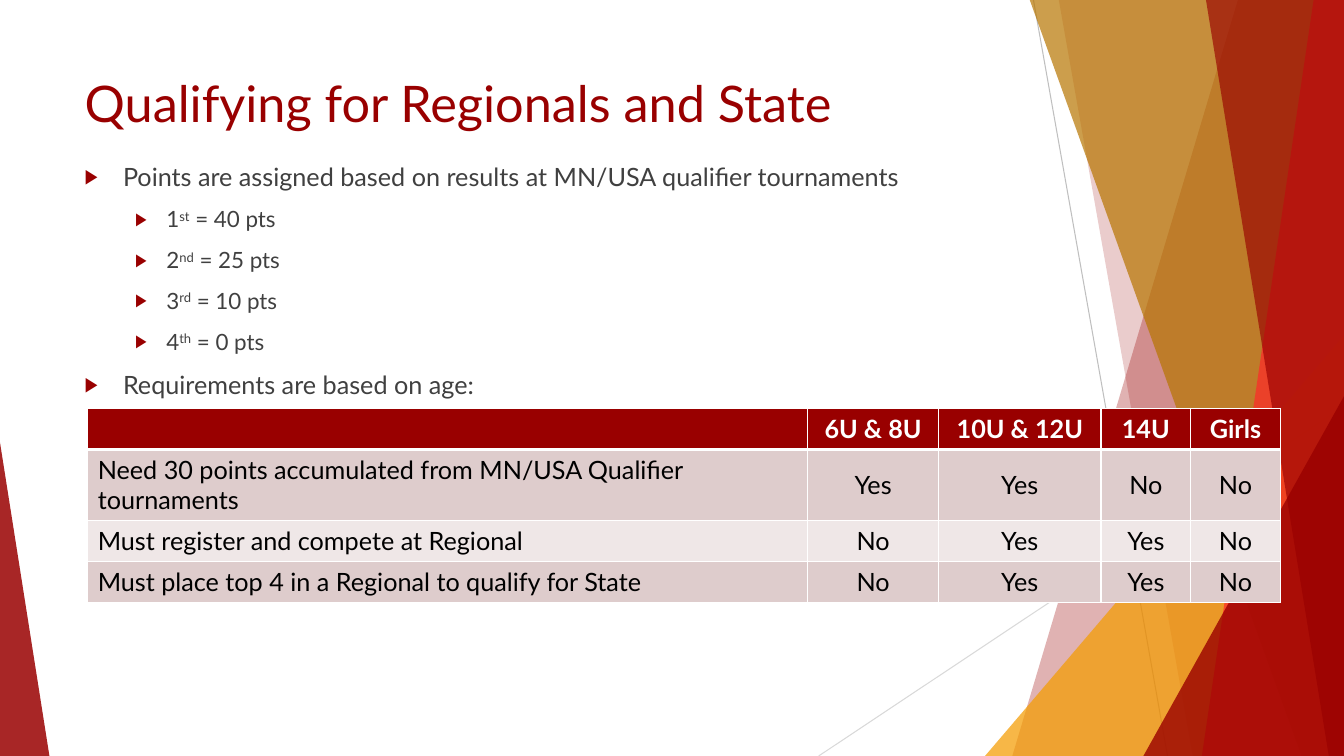
from lxml.etree import SubElement
from pptx import Presentation
from pptx.dml.color import RGBColor
from pptx.enum.shapes import MSO_CONNECTOR, MSO_SHAPE
from pptx.enum.text import MSO_ANCHOR, MSO_AUTO_SIZE, PP_ALIGN
from pptx.oxml.ns import qn
from pptx.util import Emu, Pt

EMU_PER_PX = 9144
WIDTH, HEIGHT = 1333, 750
RED, INK, WHITE, BLACK = "990000", "404040", "FFFFFF", "000000"

FACETS = [
    (1228, 1004, RED, 30),
    (1050, 1183, RED, 20),
    (977, 333, 356, 417, 1, "F49C00", 72),
    (1021, 1291, "B77500", 70),
    (1303, 1192, "FF2929", 70),
    (1196, 1318, RED, 65),
    (1134, 393, 199, 357, 1, RED, 80),
    (0, 439, 49, 311, 0, RED, 85),
]
BULLETS = [
    (0, ["Points are assigned based on results at MN/USA qualifier tournaments"]),
    (1, ["1", "st", " = 40 pts"]),
    (1, ["2", "nd", " = 25 pts"]),
    (1, ["3", "rd", " = 10 pts"]),
    (1, ["4", "th", " = 0 pts"]),
    (0, ["Requirements are based on age:"]),
]
REQUIREMENTS = [
    ["", "6U & 8U", "10U & 12U", "14U", "Girls"],
    ["Need 30 points accumulated from MN/USA Qualifier tournaments", "Yes", "Yes", "No", "No"],
    ["Must register and compete at Regional", "No", "Yes", "Yes", "No"],
    ["Must place top 4 in a Regional to qualify for State", "No", "Yes", "Yes", "No"],
]
ROW_FILLS = [RED, "DECCCC", "EFE7E7", "DECCCC"]


def px(*lengths):
    return [Emu(length * EMU_PER_PX) for length in lengths]


def colour(value):
    return RGBColor.from_string(value)


def apply(target, values):
    for name, value in values.items():
        setattr(target, name, value)


class SlideBuilder:
    """Draws styled elements on the current slide."""

    def __init__(self, page, font):
        self.page = page
        self.font = font

    def span(self, para, text, size, ink, **values):
        span = para.add_run()
        span.text = text
        apply(span.font, {"name": self.font, "size": Pt(size), **values})
        span.font.color.rgb = colour(ink)
        return span

    def line(self, start, end, ink):
        line = self.page.shapes.add_connector(MSO_CONNECTOR.STRAIGHT, *px(*start, *end))
        line.line.color.rgb = colour(ink)
        line.line.width = Pt(0.75)
        SubElement(line.element.spPr, qn("a:effectLst"))

    def paint(self, shape, ink, opacity):
        shape.shadow.inherit = False
        shape.fill.solid()
        shape.fill.fore_color.rgb = colour(ink)
        shape.line.fill.background()
        tint = shape.element.spPr.find(".//" + qn("a:srgbClr"))
        SubElement(tint, qn("a:alpha"), val=str(opacity * 1000))

    def band(self, top, bottom, ink, opacity):
        outline = self.page.shapes.build_freeform(top, -1, scale=EMU_PER_PX)
        outline.add_line_segments([(WIDTH, -1), (WIDTH, HEIGHT), (bottom, HEIGHT)])
        self.paint(outline.convert_to_shape(), ink, opacity)

    def triangle(self, left, top, width, height, apex, ink, opacity):
        shape = self.page.shapes.add_shape(
            MSO_SHAPE.ISOSCELES_TRIANGLE, *px(left, top, width, height))
        shape.adjustments[0] = apex
        self.paint(shape, ink, opacity)

    def place(self, holder, *bounds):
        apply(holder, dict(zip(("left", "top", "width", "height"), px(*bounds))))
        apply(holder.text_frame, {
            "word_wrap": True,
            "auto_size": MSO_AUTO_SIZE.NONE,
            "vertical_anchor": MSO_ANCHOR.TOP,
        })
        holder.element.getparent().append(holder.element)
        return holder.text_frame

    def title(self, text, *bounds):
        para = self.place(self.page.shapes.title, *bounds).paragraphs[0]
        para.alignment = PP_ALIGN.LEFT
        self.span(para, text, 36, RED)

    def bullets(self, items, *bounds):
        frame = self.place(self.page.placeholders[1], *bounds)
        for index, (level, parts) in enumerate(items):
            para = frame.add_paragraph() if index else frame.paragraphs[0]
            apply(para, {"level": level, "space_before": Pt(10)})
            self.mark(para, *((81, 31) if level else (38, 38)))
            for order, part in enumerate(parts):
                span = self.span(para, part, 16 if level else 18, INK)
                if order == 1:
                    span.font._element.set("baseline", "30000")

    def mark(self, para, margin, hanging):
        properties = para._p.get_or_add_pPr()
        indent, hang = px(margin, hanging)
        properties.set("marL", str(indent))
        properties.set("indent", str(-hang))
        SubElement(SubElement(properties, qn("a:buClr")), qn("a:srgbClr"), val=RED)
        SubElement(properties, qn("a:buSzPct"), val="80000")
        SubElement(properties, qn("a:buChar"), char="▶")

    def border(self, cell, side, points):
        edge = SubElement(cell._tc.get_or_add_tcPr(), qn("a:ln" + side), w=str(Pt(points)))
        SubElement(SubElement(edge, qn("a:solidFill")), qn("a:srgbClr"), val=WHITE)

    def table(self, rows, fills, widths, heights, left, top):
        table = self.page.shapes.add_table(
            len(rows), len(widths), *px(left, top, sum(widths), sum(heights))).table
        for column, width in zip(table.columns, px(*widths)):
            column.width = width
        for row, height in zip(table.rows, px(*heights)):
            row.height = height
        for row, texts in enumerate(rows):
            for column, text in enumerate(texts):
                self.cell(table.cell(row, column), text, fills[row], row == 0, column == 0)

    def cell(self, cell, text, fill, heading, label):
        for side in "LRTB":
            self.border(cell, side, 3 if heading and side == "B" else 1)
        cell.fill.solid()
        cell.fill.fore_color.rgb = colour(fill)
        cell.vertical_anchor = MSO_ANCHOR.TOP if label else MSO_ANCHOR.MIDDLE
        para = cell.text_frame.paragraphs[0]
        para.alignment = PP_ALIGN.LEFT if label else PP_ALIGN.CENTER
        if text:
            self.span(para, text, 18, WHITE if heading else BLACK, bold=heading)
        else:
            para.font.size = Pt(18)


def main():
    deck = Presentation()
    deck.slide_width, deck.slide_height = px(WIDTH, HEIGHT)
    builder = SlideBuilder(deck.slides.add_slide(deck.slide_layouts[1]), "Lato")
    builder.line((1025, 0), (1158, HEIGHT), "BFBFBF")
    builder.line((WIDTH, 403), (812, HEIGHT), "D9D9D9")
    for facet in FACETS:
        draw = builder.band if len(facet) == 4 else builder.triangle
        draw(*facet)
    builder.title("Qualifying for Regionals and State", 74, 67, 940, 74)
    builder.bullets(BULLETS, 74, 155, 1034, 249)
    builder.table(REQUIREMENTS, ROW_FILLS, [714, 130, 161, 89, 89], [41, 69, 41, 41], 87, 405)
    deck.save("out.pptx")


if __name__ == "__main__":
    main()
